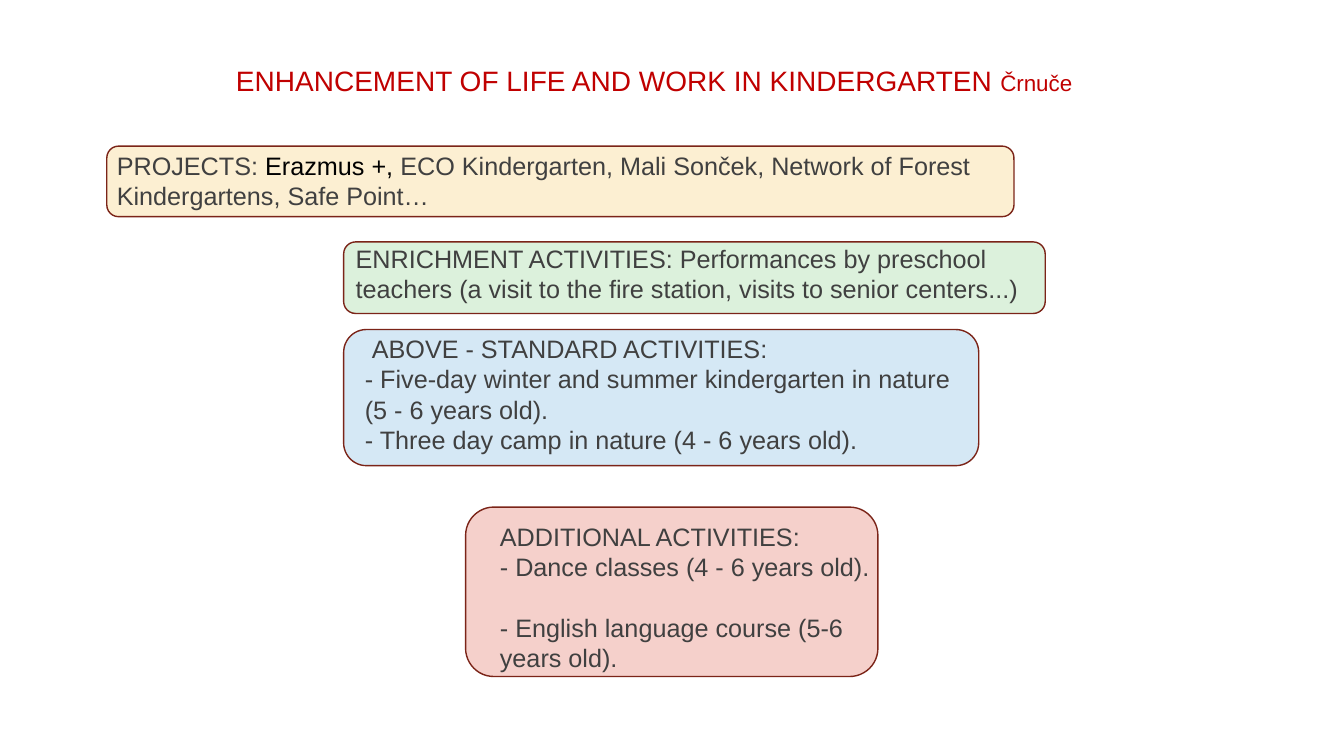
from dataclasses import dataclass
from typing import Optional

from lxml import etree
from pptx import Presentation
from pptx.dml.color import RGBColor
from pptx.enum.shapes import MSO_SHAPE
from pptx.enum.text import MSO_ANCHOR, MSO_AUTO_SIZE, PP_ALIGN
from pptx.oxml.ns import qn
from pptx.util import Pt

ROUNDED = MSO_SHAPE.ROUNDED_RECTANGLE
TOP, LEFT = MSO_ANCHOR.TOP, PP_ALIGN.LEFT
NO_AUTOFIT = MSO_AUTO_SIZE.NONE
TWO_CONTENT = 3
FONT = "Arial"
COLORS = {
    "title": "C00000", "text": "404040", "accent": "000000", "border": "7B2418",
    "red": "F5D0CB", "blue": "D5E8F5", "green": "DCF1DC", "yellow": "FCEFD2",
}


@dataclass
class Run:
    text: str
    color: str = "text"
    size: float = 18


@dataclass
class Line:
    runs: list[Run]
    indent: float = 0
    before: float = 0


@dataclass
class Card:
    box: tuple[float, float, float, float]
    fill: str
    inset_left: float
    inset_top: float
    lines: list[Line]
    placeholder: Optional[int] = None


TITLE = [Line([Run("ENHANCEMENT OF LIFE AND WORK IN KINDERGARTEN ", "title", 20),
               Run("Črnuče", "title", 16)])]

CARDS = [
    Card((332.6, 362.2, 294.5, 121), "red", 18.6, 4.2, [
        Line([Run("ADDITIONAL ACTIVITIES:")]),
        Line([Run("- Dance classes (4 - 6 years old).")]),
        Line([Run("- English language course (5-6 years old).")], before=21.6),
    ], placeholder=2),
    Card((245.5, 235.4, 453.6, 97.2), "blue", 10.4, -1.9, [
        Line([Run("ABOVE - STANDARD ACTIVITIES:")], indent=5),
        Line([Run("- Five-day winter and summer kindergarten in nature (5 - 6 years old).")]),
        Line([Run("- Three day camp in nature (4 - 6 years old).")]),
    ], placeholder=1),
    Card((245.5, 172.8, 501.1, 51.1), "green", 6.1, -1.8, [
        Line([Run("ENRICHMENT ACTIVITIES: Performances by preschool teachers "
                  "(a visit to the fire station, visits to senior centers...)")]),
    ]),
    Card((76.3, 104.4, 648, 50.4), "yellow", 4.7, 0.4, [
        Line([Run("PROJECTS: "), Run("Erazmus +, ", "accent"),
              Run("ECO Kindergarten, Mali Sonček, Network of Forest "
                  "Kindergartens, Safe Point…")]),
    ]),
]


def rgb(name: str) -> RGBColor:
    return RGBColor.from_string(COLORS[name])


def place(sp, box: tuple[float, float, float, float]) -> None:
    for name, value in zip(("left", "top", "width", "height"), box):
        setattr(sp, name, Pt(value))


def write(sp, lines: list[Line], margins: tuple[float, float, float, float]) -> None:
    """Fill the text frame; margins run left, top, right, bottom."""
    tf = sp.text_frame
    frame = {"word_wrap": True, "auto_size": NO_AUTOFIT, "vertical_anchor": TOP}
    for name, value in frame.items():
        setattr(tf, name, value)
    for side, value in zip(("left", "top", "right", "bottom"), margins):
        setattr(tf, f"margin_{side}", Pt(value))
    for i, line in enumerate(lines):
        p = tf.add_paragraph() if i else tf.paragraphs[0]
        pPr = p._p.get_or_add_pPr()
        pPr.set("marL", str(Pt(line.indent)))
        pPr.set("indent", "0")
        etree.SubElement(pPr, qn("a:buNone"))
        layout = {"alignment": LEFT, "space_before": Pt(line.before), "space_after": Pt(0)}
        for name, value in layout.items():
            setattr(p, name, value)
        for run in line.runs:
            r = p.add_run()
            r.text = run.text
            style = {"name": FONT, "size": Pt(run.size), "bold": False}
            for name, value in style.items():
                setattr(r.font, name, value)
            r.font.color.rgb = rgb(run.color)


def round_corners(sp) -> None:
    """Give a placeholder the rounded outline that the other cards have."""
    geom = etree.Element(qn("a:prstGeom"), prst="roundRect")
    etree.SubElement(geom, qn("a:avLst"))
    sp._element.spPr.find(qn("a:xfrm")).addnext(geom)


def add_card(s, card: Card) -> None:
    if card.placeholder is None:
        sp = s.shapes.add_shape(ROUNDED, *map(Pt, card.box))
        sp.shadow.inherit = False
    else:
        sp = s.placeholders[card.placeholder]
        place(sp, card.box)
        round_corners(sp)
    sp.fill.solid()
    sp.fill.fore_color.rgb = rgb(card.fill)
    sp.line.color.rgb = rgb("border")
    sp.line.width = Pt(1)
    write(sp, card.lines, (card.inset_left, card.inset_top, 0, 0))


def main() -> None:
    prs = Presentation()
    prs.slide_width, prs.slide_height = Pt(960), Pt(540)
    s = prs.slides.add_slide(prs.slide_layouts[TWO_CONTENT])
    place(s.shapes.title, (161.3, 41.8, 668.9, 31.7))
    write(s.shapes.title, TITLE, (7.2, 3.6, 7.2, 3.6))
    for card in CARDS:
        add_card(s, card)
    prs.save("out.pptx")


if __name__ == "__main__":
    main()
